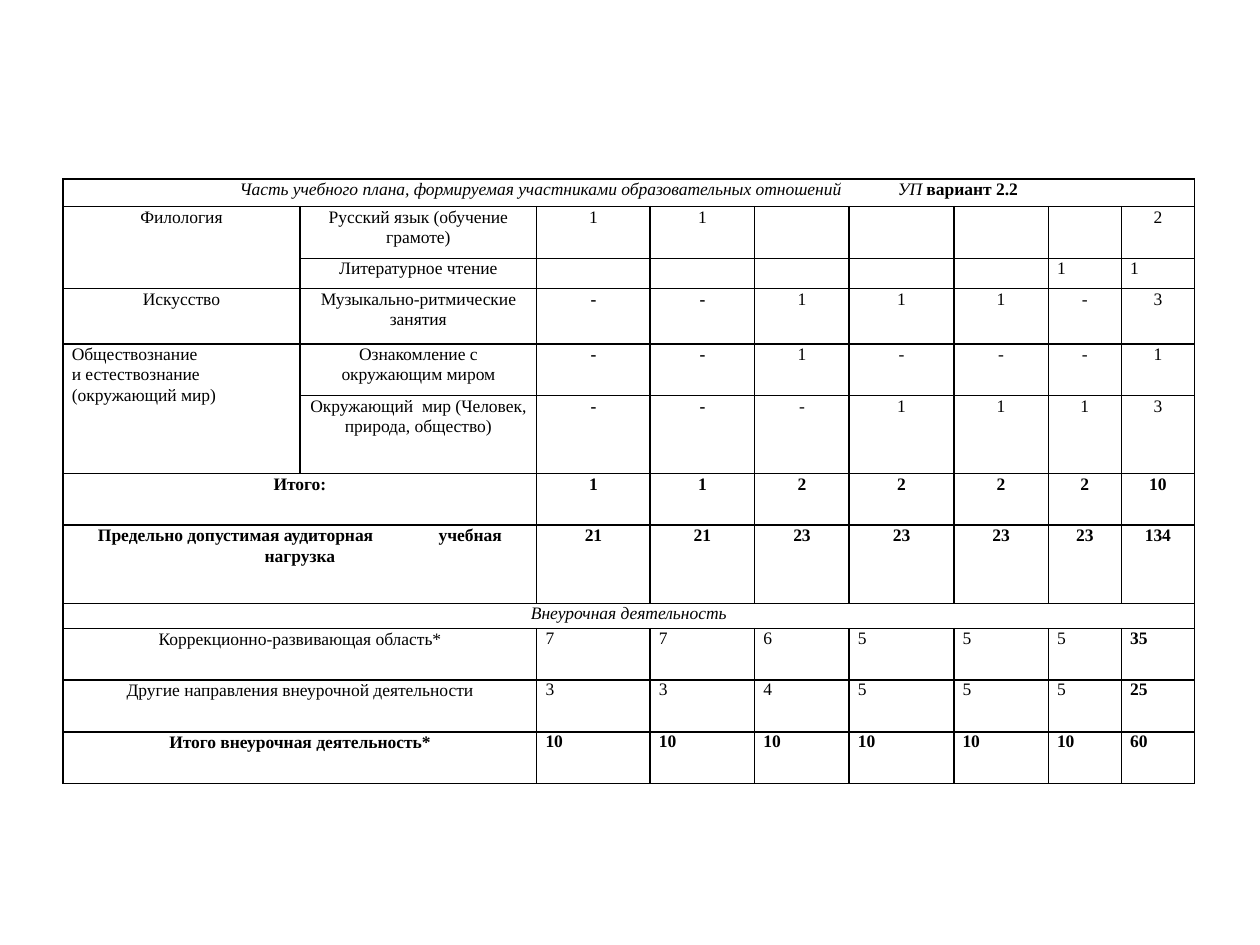
import pptx
import pptx.dml.color
import pptx.enum.text
import pptx.oxml
import pptx.oxml.ns
import pptx.util
from pptx.util import Inches

CENTER = pptx.enum.text.PP_ALIGN.CENTER
LEFT = pptx.enum.text.PP_ALIGN.LEFT
BOLD = {"bold": True}
ITALIC = {"italic": True}
COLUMN_WIDTHS = [1.88, 1.88, 0.9, 0.83, 0.75, 0.83, 0.75, 0.58, 0.58]
ROW_HEIGHTS = [0.22, 0.41, 0.24, 0.44, 0.41, 0.62, 0.41, 0.62, 0.2, 0.41, 0.41, 0.41]

# Subjects by area: row, subject, hours by class and in total, alignment of the hours
SUBJECTS = [
    (1, "Русский язык (обучение грамоте)", ["1", "1", "", "", "", "", "2"], CENTER),
    (2, "Литературное чтение", ["", "", "", "", "", "1", "1"], LEFT),
    (3, "Музыкально-ритмические занятия", ["-", "-", "1", "1", "1", "-", "3"], CENTER),
    (4, "Ознакомление с окружающим миром", ["-", "-", "1", "-", "-", "-", "1"], CENTER),
    (5, "Окружающий  мир (Человек, природа, общество)",
     ["-", "-", "-", "1", "1", "1", "3"], CENTER),
]
# Areas: first row, last row, name, alignment
AREAS = [
    (1, 2, "Филология", CENTER),
    (3, 3, "Искусство", CENTER),
    (4, 5, "Обществознание \vи естествознание (окружающий мир)", LEFT),
]
# Totals of the lessons: row, runs of the label, hours
LESSON_TOTALS = [
    (6, [("Итого:", BOLD)], ["1", "1", "2", "2", "2", "2", "10"]),
    (7, [("Предельно допустимая аудиторная", BOLD), (" ", {"spacing": 35}),
         ("учебная нагрузка", BOLD)], ["21", "21", "23", "23", "23", "23", "134"]),
]
# Activities outside lessons: row, label, hours, whether the whole row is bold
ACTIVITIES = [
    (9, "Коррекционно-развивающая область*", ["7", "7", "6", "5", "5", "5", "35"], False),
    (10, "Другие направления внеурочной деятельности",
     ["3", "3", "4", "5", "5", "5", "25"], False),
    (11, "Итого внеурочная деятельность*", ["10"] * 6 + ["60"], True),
]


def color(hex_value):
    return pptx.dml.color.RGBColor.from_string(hex_value)


class PlanSlide:
    font_format = {"name": "Times New Roman", "size": pptx.util.Pt(10)}
    cell_format = {"margin_left": Inches(0.07), "margin_right": Inches(0.07),
                   "margin_top": 0, "margin_bottom": 0}
    ink = "000000"
    border_width = pptx.util.Pt(1)

    def __init__(self, presentation):
        self.slide = presentation.slides.add_slide(presentation.slide_layouts[6])

    def table(self, left, top, widths, heights):
        frame = self.slide.shapes.add_table(
            len(heights), len(widths), Inches(left), Inches(top),
            Inches(sum(widths)), Inches(sum(heights)))
        self.plan = frame.table
        for flag in ("first_row", "horz_banding"):
            setattr(self.plan, flag, False)
        for column, width in zip(self.plan.columns, widths):
            column.width = Inches(width)
        for row, height in zip(self.plan.rows, heights):
            row.height = Inches(height)
        for cell in self.plan.iter_cells():
            self.style_cell(cell)

    def style_cell(self, cell):
        for attribute, value in self.cell_format.items():
            setattr(cell, attribute, value)
        properties = cell._tc.get_or_add_tcPr()
        for side in "LRTB":
            properties.append(pptx.oxml.parse_xml(
                f'<a:ln{side} {pptx.oxml.ns.nsdecls("a")} w="{self.border_width}">'
                f'<a:solidFill><a:srgbClr val="{self.ink}"/></a:solidFill></a:ln{side}>'))
        cell.fill.background()
        # Keeps empty cells as low as the filled ones
        cell.text_frame.paragraphs[0]._p.append(pptx.oxml.parse_xml(
            f'<a:endParaRPr {pptx.oxml.ns.nsdecls("a")} sz="1000"/>'))

    def merge(self, first, last):
        self.plan.cell(*first).merge(self.plan.cell(*last))

    def text(self, row, column, runs, align=CENTER, line_spacing=1.06):
        paragraph = self.plan.cell(row, column).text_frame.paragraphs[0]
        paragraph.alignment = align
        if line_spacing:
            paragraph.line_spacing = line_spacing
        for words, style in runs:
            for index, line in enumerate(words.split("\v")):
                if index:
                    paragraph.add_line_break()
                run = paragraph.add_run()
                run.text = line
                style_values = dict(style)
                spacing = style_values.pop("spacing", None)
                for attribute, value in {**self.font_format, **style_values}.items():
                    setattr(run.font, attribute, value)
                run.font.color.rgb = color(self.ink)
                if spacing:
                    run._r.get_or_add_rPr().set("spc", str(spacing * 100))

    def hours(self, row, values, is_bold, **paragraph_format):
        for position, value in enumerate(values):
            if value:
                style = BOLD if is_bold(position, value) else {}
                self.text(row, position + 2, [(value, style)], **paragraph_format)


def main():
    presentation = pptx.Presentation()
    presentation.slide_width = Inches(10)
    presentation.slide_height = Inches(7.5)
    plan = PlanSlide(presentation)
    plan.table(0.5, 1.42, COLUMN_WIDTHS, ROW_HEIGHTS)

    # Section headings across the table
    headings = {
        0: [("Часть учебного плана, формируемая участниками образовательных отношений", ITALIC),
            (" ", {"spacing": 30}), ("УП ", ITALIC), ("вариант 2.2", BOLD)],
        8: [("Внеурочная деятельность", ITALIC)],
    }
    for row, runs in headings.items():
        plan.merge((row, 0), (row, len(COLUMN_WIDTHS) - 1))
        plan.text(row, 0, runs)

    # Areas and subjects
    for first, last, area, align in AREAS:
        if last > first:
            plan.merge((first, 0), (last, 0))
        plan.text(first, 0, [(area, {})], align)
    for row, subject, values, align in SUBJECTS:
        plan.text(row, 1, [(subject, {})])
        plan.hours(row, values, lambda position, value: value == "-" and position < 2,
                   align=align)

    # Lesson totals
    for row, label, values in LESSON_TOTALS:
        plan.merge((row, 0), (row, 1))
        plan.text(row, 0, label)
        plan.hours(row, values, lambda position, value: True)

    # Activities outside lessons, with a bold total column
    for row, activity, values, all_bold in ACTIVITIES:
        plan.merge((row, 0), (row, 1))
        plan.text(row, 0, [(activity, BOLD if all_bold else {})])
        plan.hours(row, values, lambda position, value: all_bold or position == 6,
                   align=LEFT, line_spacing=None)

    presentation.save("out.pptx")


if __name__ == "__main__":
    main()
